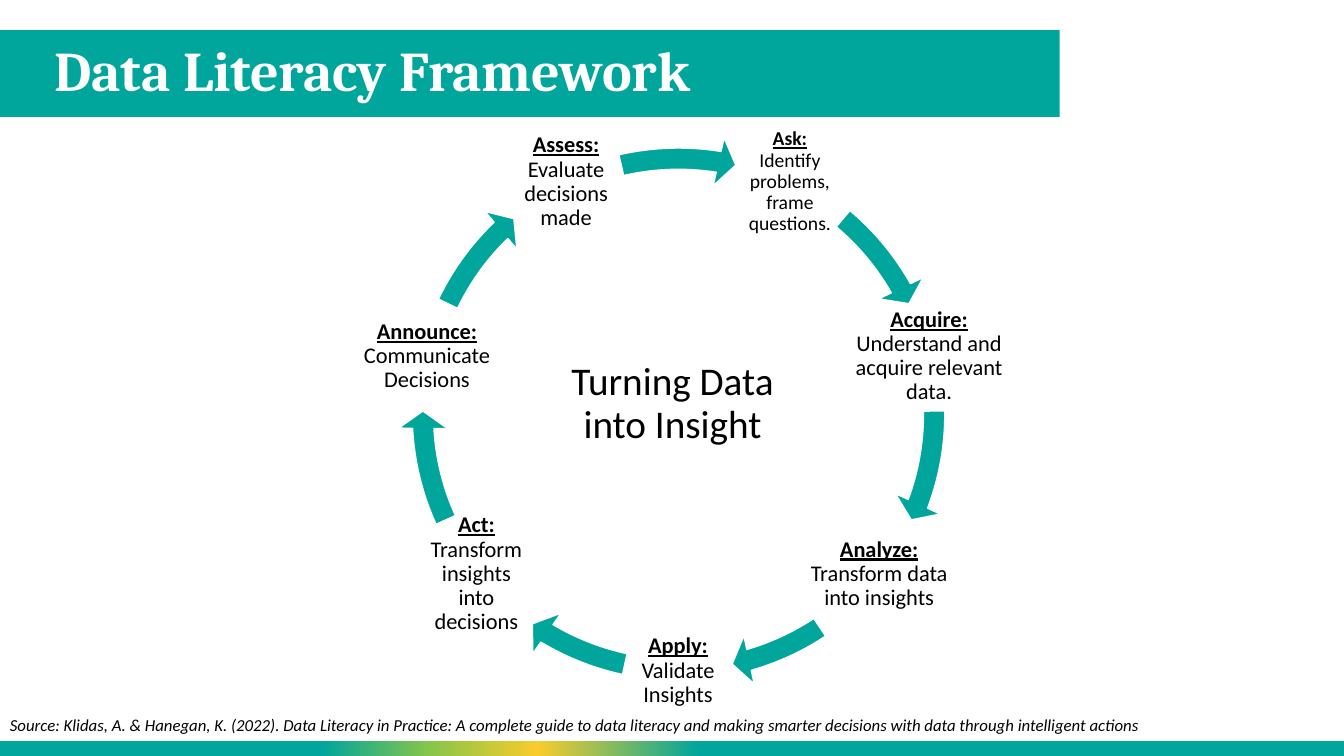
from lxml import etree
from pptx import Presentation
from pptx.dml.color import RGBColor
from pptx.enum.shapes import MSO_SHAPE
from pptx.enum.text import MSO_ANCHOR, MSO_AUTO_SIZE, PP_ALIGN
from pptx.oxml.ns import qn
from pptx.util import Inches, Pt

RECTANGLE = MSO_SHAPE.RECTANGLE
CIRCULAR_ARROW = MSO_SHAPE.CIRCULAR_ARROW
TOP, MIDDLE = MSO_ANCHOR.TOP, MSO_ANCHOR.MIDDLE
LEFT, CENTER = PP_ALIGN.LEFT, PP_ALIGN.CENTER
NO_FIT, GROW = MSO_AUTO_SIZE.NONE, MSO_AUTO_SIZE.SHAPE_TO_FIT_TEXT

TEAL = RGBColor(0x00, 0xA6, 0x9B)
YELLOW = RGBColor(0xF8, 0xCC, 0x2B)
GREEN = RGBColor(0x87, 0xC5, 0x4A)
WHITE = RGBColor(0xFF, 0xFF, 0xFF)
BLACK = RGBColor(0x00, 0x00, 0x00)

FOOTER_STOPS = [(0, TEAL), (48, TEAL), (60, YELLOW), (68, GREEN), (76, TEAL), (100, TEAL)]
RING = (3.95, 1.33, 5.56, 5.56)

STEPS = [
    ("Ask:", "Identify problems, frame questions.", (7.3, 1.27, 1.07), 14, (310.08, 330.46)),
    ("Acquire:", "Understand and acquire relevant data.", (8.46, 3, 1.51), 16, (359.28, 20.52)),
    ("Analyze:", "Transform data into insights", (7.94, 5.16, 1.56), 16, (56.46, 73.97)),
    ("Apply:", "Validate Insights", (6.19, 6.12, 1.07), 16, (102.12, 120.97)),
    ("Act:", "Transform insights into decisions", (4.19, 5.16, 1.07), 16, (155.57, 176.81)),
    ("Announce:", "Communicate Decisions", (3.36, 3, 1.75), 16, (205.62, 226.01)),
    ("Assess:", "Evaluate decisions made", (5.08, 1.27, 1.07), 16, (257.06, 279.03)),
]


def inches(box):
    return [Inches(length) for length in box]


def place(shape, box):
    shape.left, shape.top, shape.width, shape.height = inches(box)


def write_text(paragraph, text, size, color=BLACK, font="Calibri", bold=False,
               italic=False, underline=False, align=LEFT, spacing=0.9):
    paragraph.alignment = align
    paragraph.line_spacing = spacing
    paragraph.space_before = Pt(0)
    run = paragraph.add_run()
    run.text = text
    run.font.name = font
    run.font.size = Pt(size)
    run.font.color.rgb = color
    run.font.bold = bold
    run.font.italic = italic
    run.font.underline = underline


def format_frame(frame, anchor=TOP, auto_size=NO_FIT, margin=None):
    frame.word_wrap = True
    frame.auto_size = auto_size
    frame.vertical_anchor = anchor
    if margin is not None:
        frame.margin_left = frame.margin_right = Inches(margin)
        frame.margin_top = frame.margin_bottom = Inches(margin)


def add_bar(slide, box, order):
    bar = slide.shapes.add_shape(RECTANGLE, *inches(box))
    bar.shadow.inherit = False
    bar.fill.solid()
    bar.fill.fore_color.rgb = TEAL
    bar.line.fill.background()
    slide.shapes._spTree.insert(2 + order, bar._element)
    return bar


def set_gradient(shape, stops, angle):
    shape.fill.gradient()
    shape.fill.gradient_angle = angle
    stop_list = shape._element.spPr.find(qn("a:gradFill")).find(qn("a:gsLst"))
    for stop in list(stop_list):
        stop_list.remove(stop)
    for position, color in stops:
        stop = etree.SubElement(stop_list, qn("a:gs"), pos=str(position * 1000))
        etree.SubElement(stop, qn("a:srgbClr"), val=str(color))


def add_step(group, heading, detail, position, size):
    box = group.shapes.add_textbox(*inches((*position, 1.07)))
    format_frame(box.text_frame, anchor=MIDDLE, margin=0.02)
    paragraph = box.text_frame.paragraphs[0]
    write_text(paragraph, heading, size, bold=True, underline=True, align=CENTER)
    paragraph.add_line_break()
    write_text(paragraph, detail, size, align=CENTER)


def add_arrow(group, start, end):
    arrow = group.shapes.add_shape(CIRCULAR_ARROW, *inches(RING))
    arrow.shadow.inherit = False
    arrow.fill.solid()
    arrow.fill.fore_color.rgb = TEAL
    arrow.line.color.rgb = WHITE
    arrow.line.width = Pt(1)
    head_angle, end_angle, start_angle = (degrees * 0.6 for degrees in (3.91, end, start))
    for index, value in enumerate((0.038, head_angle, end_angle, start_angle, 0.044)):
        arrow.adjustments[index] = value


def fill_title(slide):
    title = slide.shapes.title
    place(title, (0.44, 0.3, 10.06, 0.86))
    format_frame(title.text_frame, anchor=MIDDLE)
    write_text(title.text_frame.paragraphs[0], "Data Literacy Framework", 40,
               color=WHITE, font="Cambria", bold=True)


def fill_center(slide):
    body = slide.placeholders[1]
    place(body, (5.46, 3.54, 2.42, 1.03))
    format_frame(body.text_frame)
    paragraph = body.text_frame.paragraphs[0]
    properties = paragraph._p.get_or_add_pPr()
    properties.set("marL", "0")
    properties.set("indent", "0")
    etree.SubElement(properties, qn("a:buNone"))
    write_text(paragraph, "Turning Data into Insight", 28, align=CENTER)


def add_source(slide):
    box = slide.shapes.add_textbox(*inches((0, 7.04, 12.79, 0.3)))
    format_frame(box.text_frame, auto_size=GROW)
    write_text(box.text_frame.paragraphs[0],
               "Source: Klidas, A. & Hanegan, K. (2022). Data Literacy in Practice: "
               "A complete guide to data literacy and making smarter decisions "
               "with data through intelligent actions",
               12, italic=True, spacing=1.0)


def main():
    presentation = Presentation()
    presentation.slide_width = Inches(13.33)
    presentation.slide_height = Inches(7.5)
    slide = presentation.slides.add_slide(presentation.slide_layouts[1])

    add_bar(slide, (0, 0.3, 10.51, 0.86), 0)
    footer_bar = add_bar(slide, (0, 7.35, 13.33, 0.15), 1)
    set_gradient(footer_bar, FOOTER_STOPS, 180)
    fill_title(slide)
    fill_center(slide)

    cycle = slide.shapes.add_group_shape()
    for heading, detail, position, size, (start, end) in STEPS:
        add_step(cycle, heading, detail, position, size)
        add_arrow(cycle, start, end)
    add_source(slide)

    presentation.save("out.pptx")


if __name__ == "__main__":
    main()
